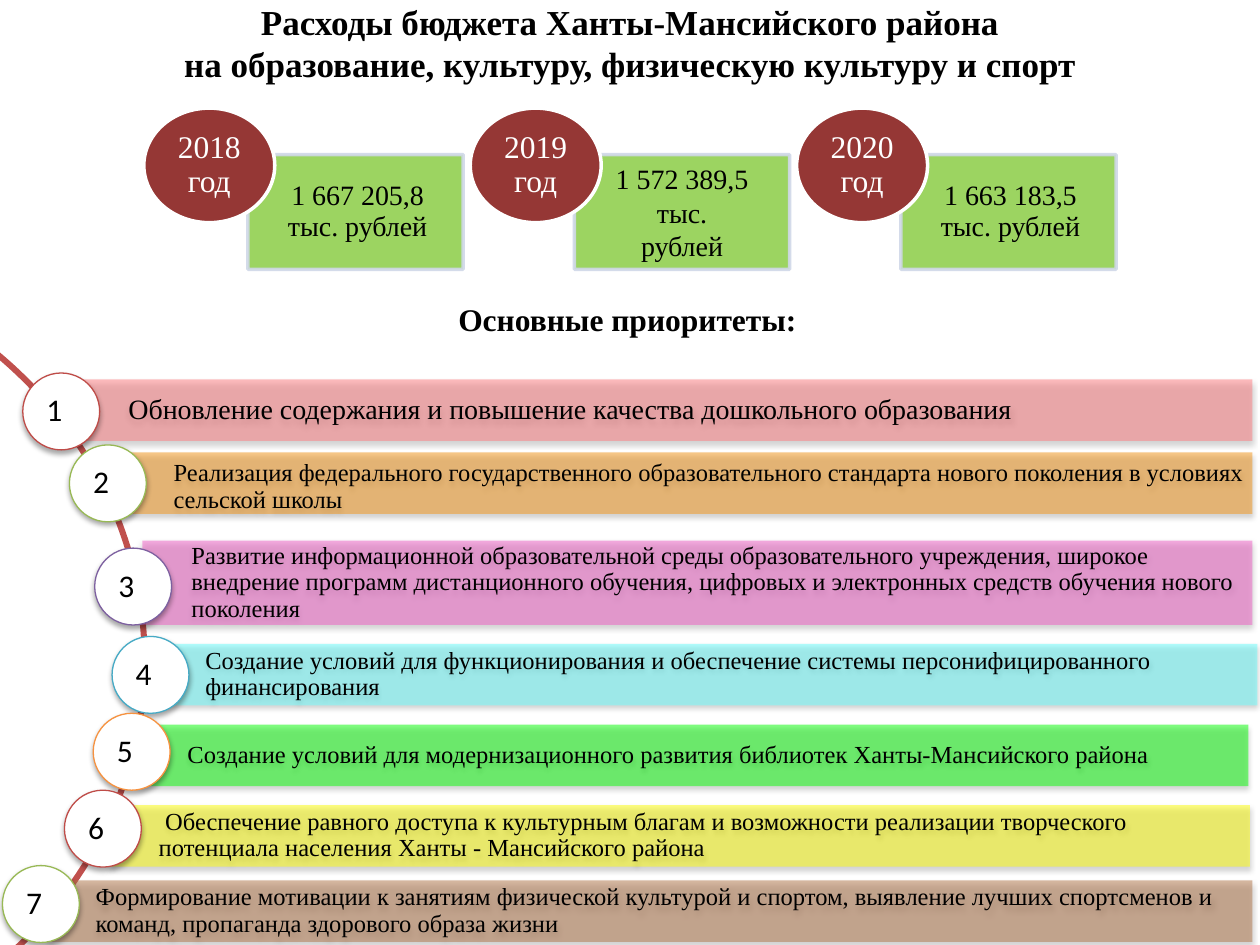
"""Build the slide on district spending and its education, culture and sport priorities."""
import dataclasses

import pptx
import pptx.dml.color
import pptx.enum.shapes
import pptx.enum.text
import pptx.oxml
import pptx.oxml.ns
import pptx.util

Cm = pptx.util.Cm
Pt = pptx.util.Pt
Shape = pptx.enum.shapes.MSO_SHAPE
Align = pptx.enum.text.PP_ALIGN
Anchor = pptx.enum.text.MSO_ANCHOR
qn = pptx.oxml.ns.qn


@dataclasses.dataclass(frozen=True)
class Theme:
    serif: str = "Times New Roman"
    sans: str = "Calibri"
    black: str = "000000"
    white: str = "FFFFFF"
    year: str = "953735"
    amount: str = "92D050"
    amount_line: str = "D0D8E8"
    arc: str = "C0504D"
    title_size: int = 20
    heading_size: int = 18
    amount_size: int = 16
    item_size: int = 14


THEME = Theme()

YEARS = [
    ("2018 год", ["1 667 205,8 тыс. рублей"], 0.9),
    ("2019 год", ["1 572 389,5", "тыс.", "рублей"], 1.0),
    ("2020 год", ["1 663 183,5 тыс. рублей"], 0.9),
]
YEAR_STEP = 6.58
BADGE_SIZE = 1.55


@dataclasses.dataclass(frozen=True)
class Priority:
    words: str
    bar: tuple
    badge: tuple
    fill: str
    ring: str
    right: float = 25.25
    height: float = 1.24
    alpha: int = 50
    size: int = THEME.item_size
    top_inset: float = 0.1
    indent: float = 0


PRIORITIES = [
    Priority("Обновление содержания и повышение качества дошкольного образования",
             (1.6, 7.65), (0.46, 7.52), "FF7C80", "BF4C48", size=16),
    Priority("Реализация федерального государственного образовательного стандарта "
             "нового поколения в условиях сельской школы",
             (2.51, 9.12), (1.4, 8.97), "F59617", "98B955", top_inset=0.26),
    Priority("Развитие информационной образовательной среды образовательного учреждения, "
             "широкое внедрение программ дистанционного обучения, цифровых и электронных "
             "средств обучения нового поколения",
             (2.87, 10.9), (1.91, 11.05), "F05EC6", "7D60A0", height=1.7),
    Priority("Создание условий для функционирования и обеспечение системы "
             "персонифицированного финансирования",
             (3.15, 12.98), (2.26, 12.83), "66FFFF", "46AAC5", right=25.35, alpha=49),
    Priority("Создание условий для модернизационного развития библиотек "
             "Ханты-Мансийского района",
             (2.79, 14.61), (1.88, 14.38), "00FF00", "F69240", right=25.17, alpha=49),
    Priority("Обеспечение равного доступа к культурным благам и возможности реализации "
             "творческого потенциала населения Ханты - Мансийского района",
             (2.21, 16.23), (1.3, 15.93), "FFFF00", "BF4C48", right=25.2, alpha=49,
             indent=0.13),
    Priority("Формирование мотивации к занятиям физической культурой и спортом, выявление "
             "лучших спортсменов и команд, пропаганда здорового образа жизни",
             (0.94, 17.75), (0.05, 17.45), "B27548", "98B955"),
]


def apply(target, values):
    """Set every attribute in a dict of format values."""
    for name, value in values.items():
        setattr(target, name, value)


def rgb(code):
    """Turn a hex code into a colour."""
    return pptx.dml.color.RGBColor.from_string(code)


def set_alpha(solid, percent):
    """Make a solid fill element partly transparent."""
    alpha = solid[0].makeelement(qn("a:alpha"), {"val": str(percent * 1000)})
    solid[0].append(alpha)


def add_shadow(shape):
    """Give a shape a soft shadow below it."""
    effects = shape.element.spPr.find(qn("a:effectLst"))
    effects.append(pptx.oxml.parse_xml(
        f'<a:outerShdw {pptx.oxml.ns.nsdecls("a")} blurRad="{Pt(3.1)}" dist="{Pt(1.8)}" '
        'dir="5400000" rotWithShape="0"><a:srgbClr val="000000">'
        '<a:alpha val="35000"/></a:srgbClr></a:outerShdw>'))


def add_block(page, kind, place, fill=None, line=None, width=2, alpha=None):
    """Add a preset shape with plain fill and line."""
    shape = page.shapes.add_shape(kind, *map(Cm, place))
    shape.shadow.inherit = False
    if fill:
        shape.fill.solid()
        shape.fill.fore_color.rgb = rgb(fill)
        if alpha:
            set_alpha(shape.element.spPr.find(qn("a:solidFill")), alpha)
    else:
        shape.fill.background()
    if line:
        shape.line.color.rgb = rgb(line)
        shape.line.width = Pt(width)
    else:
        shape.line.fill.background()
    return shape


def write(box, lines, size, align=Align.CENTER, color=THEME.black, font=THEME.serif,
          bold=False, spacing=1.0, anchor=Anchor.MIDDLE, insets=None):
    """Write one paragraph per line into a shape."""
    frame = box.text_frame
    apply(frame, {"word_wrap": True, "vertical_anchor": anchor})
    if insets:
        sides = ("margin_left", "margin_top", "margin_right", "margin_bottom")
        apply(frame, dict(zip(sides, map(Cm, insets))))
    frame.text = "\n".join(lines)
    for para in frame.paragraphs:
        apply(para, {"alignment": align, "line_spacing": spacing})
        for span in para.runs:
            apply(span.font, {"name": font, "size": Pt(size), "bold": bold})
            span.font.color.rgb = rgb(color)


def add_title(page):
    """Fill and place the title placeholder."""
    box = page.shapes.title
    apply(box, {"left": Cm(0), "top": Cm(0), "width": Cm(25.4), "height": Cm(1.73)})
    write(box, ["Расходы бюджета Ханты-Мансийского района\v"
                "на образование, культуру, физическую культуру и спорт"],
          THEME.title_size, bold=True)


def add_heading(page):
    """Add the heading above the priorities."""
    box = page.shapes.add_textbox(Cm(-0.05), Cm(5.92), Cm(25.4), Cm(1.02))
    write(box, ["Основные приоритеты:"], THEME.heading_size, bold=True, anchor=Anchor.TOP)


def add_year(page, index, year, amount, spacing):
    """Add a yearly amount with its year circle."""
    shift = index * YEAR_STEP
    box = add_block(page, Shape.RECTANGLE, (5 + shift, 3.12, 4.34, 2.31),
                    THEME.amount, THEME.amount_line, alpha=90)
    set_alpha(box.line._ln.find(qn("a:solidFill")), 90)
    insets = (0.56, 0.48, 0.48, 0.48) if len(amount) == 1 else None
    write(box, amount, THEME.amount_size, spacing=spacing, insets=insets)
    circle = add_block(page, Shape.OVAL, (2.9 + shift, 2.18, 2.64, 2.31),
                       THEME.year, THEME.white)
    write(circle, [year], THEME.heading_size, color=THEME.white, spacing=0.9,
          insets=(0.05,) * 4)


def add_priority(page, number, item):
    """Add a priority bar with its numbered badge."""
    left, top = item.bar
    bar = add_block(page, Shape.RECTANGLE, (left, top, item.right - left, item.height),
                    item.fill, alpha=item.alpha)
    add_shadow(bar)
    write(bar, [item.words], item.size, Align.LEFT, spacing=0.9,
          insets=(0.99, item.top_inset, 0.1, 0.1))
    if item.indent:
        bar.text_frame.paragraphs[0]._p.get_or_add_pPr().set("indent", str(Cm(item.indent)))
    badge = add_block(page, Shape.OVAL, (*item.badge, BADGE_SIZE, BADGE_SIZE),
                      THEME.white, item.ring, 0.75)
    add_shadow(badge)
    write(badge, [str(number)], THEME.heading_size, Align.LEFT, font=THEME.sans,
          anchor=Anchor.TOP)


def main():
    """Build and save the deck."""
    deck = pptx.Presentation()
    apply(deck, {"slide_width": Cm(25.4), "slide_height": Cm(19.05)})
    page = deck.slides.add_slide(deck.slide_layouts[5])
    add_title(page)
    for index, (year, amount, spacing) in enumerate(YEARS):
        add_year(page, index, year, amount, spacing)
    add_heading(page)
    arc = add_block(page, Shape.BLOCK_ARC, (-15.37, 4.93, 18.31, 16.74), line=THEME.arc)
    for index, value in enumerate((189, 27, 0.003)):
        arc.adjustments[index] = value
    for number, item in enumerate(PRIORITIES, 1):
        add_priority(page, number, item)
    deck.save("out.pptx")


if __name__ == "__main__":
    main()
